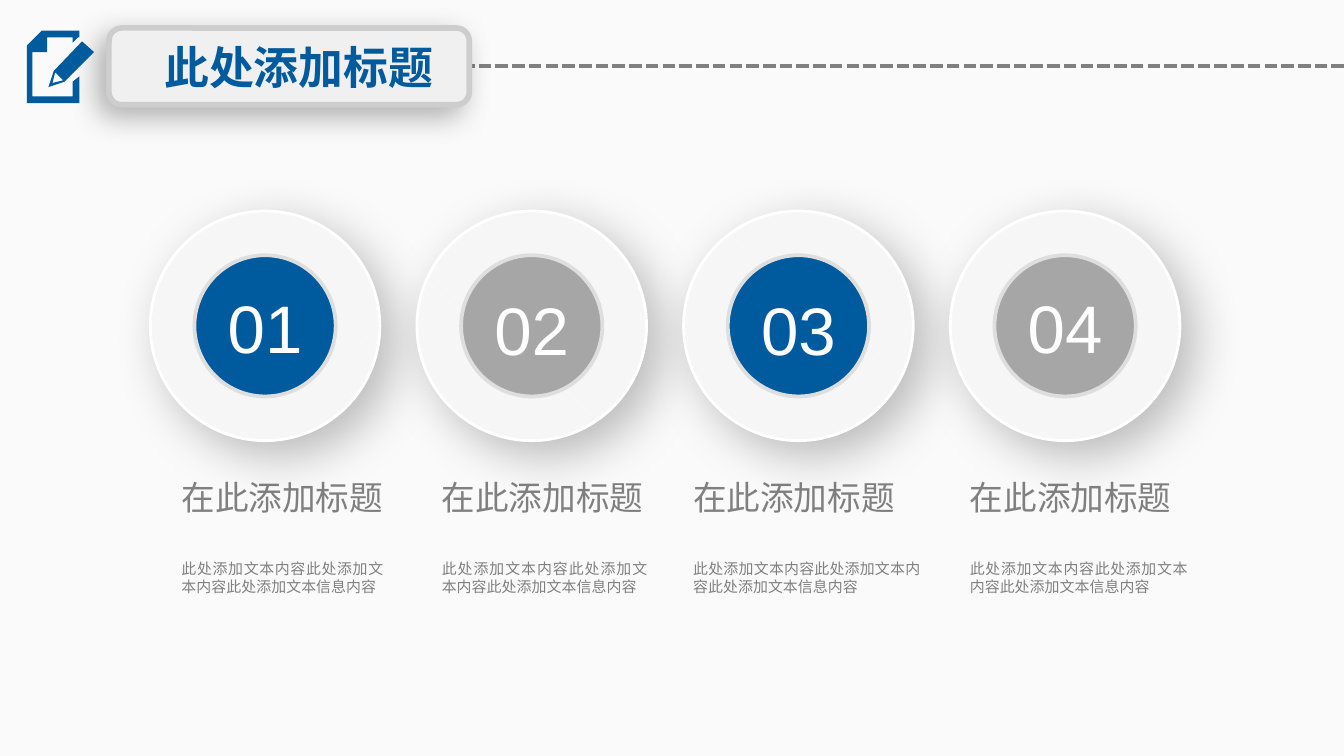
from lxml import etree
from pptx import Presentation
from pptx import util as u
from pptx.dml.color import RGBColor
from pptx.enum import dml, shapes, text
from pptx.oxml import ns

BLUE = RGBColor(0x00, 0x5A, 0x9E)
SILVER = RGBColor(0xA6, 0xA6, 0xA6)
GREY = RGBColor(0x80, 0x80, 0x80)
WHITE = RGBColor(0xFF, 0xFF, 0xFF)
BOX_EDGE = RGBColor(0xCD, 0xCD, 0xCD)
DISC_EDGE = RGBColor(0xDE, 0xDE, 0xDE)
BOX_FILL = RGBColor(0xF0, 0xF0, 0xF0), RGBColor(0xF1, 0xF1, 0xF1)
PAGE_FILL = RGBColor(0xFA, 0xFA, 0xFA), RGBColor(0xFC, 0xFC, 0xFC)
RING_FORE = RGBColor(0xF3, 0xF3, 0xF3)
RING_BACK = RGBColor(0xF7, 0xF7, 0xF7)

FONT = "Arial"
CAPTION = "在此添加标题"
BODY = "此处添加文本内容此处添加文本内容此处添加文本信息内容"
ICON_UNIT = u.Cm(0.0254)
PAGE_OUTLINE = [(34, 49), (4, 49), (4, 16), (15, 16), (15, 5), (34, 5), (34, 9), (38, 5),
                (39, 5), (39, 0), (11, 0), (0, 11), (0, 54), (39, 54), (39, 34), (34, 38)]
PEN_OUTLINE = [(20, 30), (16, 42), (28, 38), (50, 16), (41, 8)]
PEN_TIP = [(27, 37), (19, 39), (21, 31)]


def fill_gradient(fill, colors, angle):
    """Apply a two-colour linear gradient."""
    fill.gradient()
    fill.gradient_angle = angle
    for stop, color in zip(fill.gradient_stops, colors):
        stop.color.rgb = color


def add_shadow(shape, opacity, blur, distance, direction):
    """Give a shape a soft black outer shadow."""
    shape.shadow.inherit = False
    effects = shape.element.spPr.find(ns.qn("a:effectLst"))
    shadow = etree.SubElement(effects, ns.qn("a:outerShdw"), blurRad=str(u.Pt(blur)),
                              dist=str(u.Pt(distance)), dir=str(direction * 60000),
                              algn="ctr", rotWithShape="0")
    color = etree.SubElement(shadow, ns.qn("a:srgbClr"), val="000000")
    etree.SubElement(color, ns.qn("a:alpha"), val=str(opacity * 1000))


def format_text(shape, content, size, color, alignment=text.PP_ALIGN.LEFT, bold=False):
    """Set the wording of a shape and format it."""
    shape.text_frame.text = content
    paragraph = shape.text_frame.paragraphs[0]
    paragraph.alignment = alignment
    font = paragraph.runs[0].font
    font.name, font.size, font.bold = FONT, u.Pt(size), bold
    font.color.rgb = color


def add_text(slide, box, content, size, color, alignment=text.PP_ALIGN.LEFT):
    """Add a wrapping text box and return it."""
    shape = slide.shapes.add_textbox(*map(u.Cm, box))
    shape.text_frame.word_wrap = True
    format_text(shape, content, size, color, alignment)
    return shape


def add_circle(slide, center_x, center_y, diameter, edge, edge_width):
    """Add an outlined circle around a centre point."""
    corner = center_x - diameter / 2, center_y - diameter / 2
    circle = slide.shapes.add_shape(shapes.MSO_SHAPE.OVAL,
                                    *map(u.Cm, (*corner, diameter, diameter)))
    circle.shadow.inherit = False
    circle.line.color.rgb = edge
    circle.line.width = u.Pt(edge_width)
    return circle


def add_icon(slide, left, top):
    """Draw the page-and-pen icon from its top left corner."""
    for contours in ([PAGE_OUTLINE], [PEN_OUTLINE, PEN_TIP]):
        builder = slide.shapes.build_freeform(*contours[0][0], scale=ICON_UNIT)
        for contour in contours:
            builder.move_to(*contour[0])
            builder.add_line_segments(contour[1:], close=True)
        shape = builder.convert_to_shape(u.Cm(left), u.Cm(top))
        shape.shadow.inherit = False
        shape.fill.solid()
        shape.fill.fore_color.rgb = BLUE
        shape.line.fill.background()


def add_header(slide, left, top, width, height):
    """Place the icon, title box and dashed rule in the header band."""
    rule_y = u.Cm(top + height / 2)
    rule = slide.shapes.add_connector(shapes.MSO_CONNECTOR.STRAIGHT, u.Cm(left + width),
                                      rule_y, u.Cm(left + 7.6), rule_y)
    rule.line.color.rgb = GREY
    rule.line.width = u.Pt(2.25)
    rule.line.dash_style = dml.MSO_LINE.SQUARE_DOT
    etree.SubElement(rule.element.spPr, ns.qn("a:effectLst"))

    panel = slide.shapes.add_shape(shapes.MSO_SHAPE.ROUNDED_RECTANGLE,
                                   *map(u.Cm, (left + 1.55, top, 6.81, height)))
    fill_gradient(panel.fill, BOX_FILL, 315)
    panel.line.color.rgb = BOX_EDGE
    panel.line.width = u.Pt(3)
    add_shadow(panel, 30, 16, 7, 135)

    title = slide.shapes.title
    title.left, title.top, title.width, title.height = map(
        u.Cm, (left + 2.34, top + 0.1, 5.64, 1.27))
    title.element.getparent().append(title.element)
    title.text_frame.word_wrap = False
    title.text_frame.vertical_anchor = text.MSO_ANCHOR.MIDDLE
    format_text(title, "此处添加标题", 24, BLUE, bold=True)
    add_icon(slide, left, top + 0.05)


def add_badge(slide, left, top, diameter, number, color, number_top):
    """Place a numbered disc inside a patterned ring."""
    center = left + diameter / 2, top + diameter / 2
    ring = add_circle(slide, *center, diameter, WHITE, 1.5)
    ring.fill.patterned()
    ring.fill.pattern = dml.MSO_PATTERN.DARK_DOWNWARD_DIAGONAL
    ring.fill.fore_color.rgb = RING_FORE
    ring.fill.back_color.rgb = RING_BACK
    add_shadow(ring, 25, 27, 10, 45)

    disc = add_circle(slide, *center, 2.67, DISC_EDGE, 2)
    disc.fill.solid()
    disc.fill.fore_color.rgb = color

    label = add_text(slide, (center[0] - 1.04, top + number_top, 2.08, 1.73),
                     number, 36, WHITE, text.PP_ALIGN.CENTER)
    frame = label.text_frame
    frame.margin_left = frame.margin_right = u.Cm(0.18)
    frame.margin_top = frame.margin_bottom = u.Cm(0.1)


def add_caption(slide, left, top, width):
    """Place a heading with its justified description below."""
    add_text(slide, (left, top, 5.61, 1.8), CAPTION, 18, GREY)
    add_text(slide, (left, top + 1.57, width, 0.94), BODY, 8, GREY, text.PP_ALIGN.JUSTIFY)


def main():
    """Build and save the presentation."""
    presentation = Presentation()
    presentation.slide_width, presentation.slide_height = u.Cm(25.4), u.Cm(14.29)
    slide = presentation.slides.add_slide(presentation.slide_layouts[5])
    fill_gradient(slide.background.fill, PAGE_FILL, 270)
    add_header(slide, 0.51, 0.53, 24.89, 1.45)

    columns = [(BLUE, 1.32, 3.18, 4.32), (SILVER, 1.37, 8.1, 4.39),
               (BLUE, 1.37, 12.85, 4.8), (SILVER, 1.32, 18.08, 4.62)]
    for index, (color, number_top, caption_left, caption_width) in enumerate(columns):
        add_caption(slide, caption_left, 8.89, caption_width)
        add_badge(slide, 2.84 + index * 5.04, 3.99, 4.34, f"{index + 1:02}", color, number_top)
    presentation.save("out.pptx")


if __name__ == "__main__":
    main()
